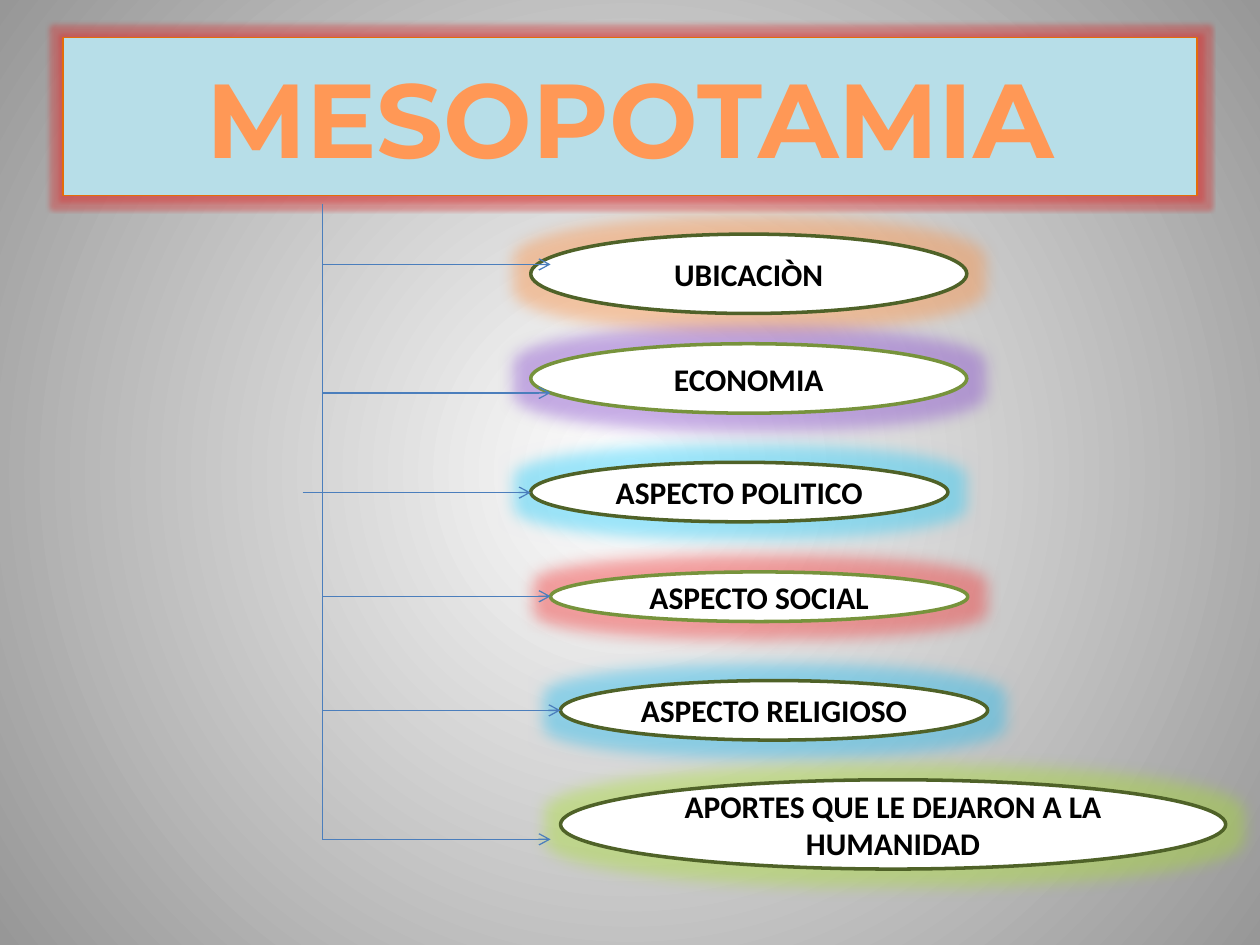
import collections
import copy
import pptx
import pptx.dml.color
import pptx.enum.shapes
import pptx.enum.text
import pptx.oxml
import pptx.oxml.ns
import pptx.util
from pptx.oxml.ns import qn
from pptx.util import Cm, Pt

Topic = collections.namedtuple("Topic", "text oval outline glow arrow")
Box = collections.namedtuple("Box", "left top width height")
Arrow = collections.namedtuple("Arrow", "start end y")

DARK_GREEN, LIGHT_GREEN = "4F6228", "77933C"
ORANGE, PURPLE, CYAN, RED, SKY, LIME = "FF8A36", "7F3FCC", "14C8FA", "F52323", "14B8F0", "A8E02A"
WHITE, BLACK, LINE_BLUE = "FFFFFF", "000000", "4B7EBC"
BANNER_FILL, BANNER_OUTLINE, BANNER_GLOW = "B7DEE8", "E46C0A", "D93030"

THIN, THICK = 0.75, 2
BANNER_GLOW_RADIUS, OVAL_GLOW_RADIUS = 5, 18
TRUNK_X, TRUNK_TOP = 6.5, 4.11

TITLE = "MESOPOTAMIA"
BANNER = Box(1.27, 0.76, 22.86, 3.18)
TITLE_STOPS = [(0, "9D4700"), (0.78, "FF9856"), (1, "FFF5F1")]
BACKGROUND_STOPS = [(0, WHITE), (1, "979797")]

TOPICS = [
    Topic("UBICACIÒN", Box(10.7, 4.72, 8.79, 1.6),
          DARK_GREEN, ORANGE, Arrow(TRUNK_X, 11.1, 5.33)),
    Topic("ECONOMIA", Box(10.7, 6.93, 8.79, 1.4),
          LIGHT_GREEN, PURPLE, Arrow(TRUNK_X, 11.1, 7.92)),
    Topic("ASPECTO POLITICO", Box(10.7, 9.32, 8.41, 1.2),
          DARK_GREEN, CYAN, Arrow(6.1, 10.7, 9.93)),
    Topic("ASPECTO SOCIAL", Box(11.1, 11.53, 8.41, 1),
          LIGHT_GREEN, RED, Arrow(TRUNK_X, 11.1, 12.02)),
    Topic("ASPECTO RELIGIOSO", Box(11.3, 13.72, 8.61, 1.2),
          DARK_GREEN, SKY, Arrow(TRUNK_X, 11.3, 14.32)),
    Topic("APORTES QUE LE DEJARON A LA HUMANIDAD", Box(11.3, 15.72, 13.41, 1.8),
          DARK_GREEN, LIME, Arrow(TRUNK_X, 11.1, 16.92)),
]


def rgb(color):
    return pptx.dml.color.RGBColor.from_string(color)


def add_xml(parent, tag, inner="", **attributes):
    pairs = " ".join(f'{name}="{value}"' for name, value in attributes.items())
    namespace = pptx.oxml.ns.nsdecls("a")
    parent.append(pptx.oxml.parse_xml(f"<a:{tag} {namespace} {pairs}>{inner}</a:{tag}>"))


def set_gradient(fill, owner, stops):
    fill.gradient()
    gradient = next(owner.iter(qn("a:gradFill")))
    stop_list = gradient.find(qn("a:gsLst"))
    while len(stop_list) < len(stops):
        stop_list.append(copy.deepcopy(stop_list[-1]))
    for stop, (position, color) in zip(fill.gradient_stops, stops):
        stop.position = position
        stop.color.rgb = rgb(color)
    return gradient


def paint_background(slide):
    gradient = set_gradient(slide.background.fill, slide.element, BACKGROUND_STOPS)
    gradient.remove(gradient.find(qn("a:lin")))
    center = '<a:fillToRect l="50000" t="50000" r="50000" b="50000"/>'
    add_xml(gradient, "path", center, path="circle")


def add_glow(shape, color, radius):
    shape.shadow.inherit = False
    effects = shape.element.spPr.find(qn("a:effectLst"))
    tint = f'<a:srgbClr val="{color}"><a:alpha val="40000"/></a:srgbClr>'
    add_xml(effects, "glow", tint, rad=Pt(radius))


def add_shape(slide, preset, box, fill, outline, outline_width):
    shape = slide.shapes.add_shape(preset, *map(Cm, box))
    shape.fill.solid()
    shape.fill.fore_color.rgb = rgb(fill)
    shape.line.color.rgb = rgb(outline)
    shape.line.width = Pt(outline_width)
    return shape


def add_label(shape, text, font, size):
    frame = shape.text_frame
    frame.word_wrap = True
    frame.vertical_anchor = pptx.enum.text.MSO_ANCHOR.MIDDLE
    paragraph = frame.paragraphs[0]
    paragraph.alignment = pptx.enum.text.PP_ALIGN.CENTER
    run = paragraph.add_run()
    run.text = text
    run.font.name = font
    run.font.size = Pt(size)
    run.font.bold = True
    return run


def add_line(slide, start_x, start_y, end_x, end_y):
    straight = pptx.enum.shapes.MSO_CONNECTOR.STRAIGHT
    connector = slide.shapes.add_connector(straight, *map(Cm, (start_x, start_y, end_x, end_y)))
    connector.line.color.rgb = rgb(LINE_BLUE)
    connector.line.width = Pt(THIN)
    add_xml(connector.element.spPr, "effectLst")
    return connector


def add_banner(slide):
    rectangle = pptx.enum.shapes.MSO_SHAPE.RECTANGLE
    banner = add_shape(slide, rectangle, BANNER, BANNER_FILL, BANNER_OUTLINE, THIN)
    add_glow(banner, BANNER_GLOW, BANNER_GLOW_RADIUS)
    heading = add_label(banner, TITLE, "Montserrat", 60)
    set_gradient(heading.font.fill, banner.element, TITLE_STOPS)
    heading.font.fill.gradient_angle = 270


def add_topic_oval(slide, topic):
    ellipse = pptx.enum.shapes.MSO_SHAPE.OVAL
    oval = add_shape(slide, ellipse, topic.oval, WHITE, topic.outline, THICK)
    add_glow(oval, topic.glow, OVAL_GLOW_RADIUS)
    label = add_label(oval, topic.text, "Calibri", 18)
    label.font.color.rgb = rgb(BLACK)


def add_topic_arrow(slide, arrow):
    branch = add_line(slide, arrow.start, arrow.y, arrow.end, arrow.y)
    add_xml(branch.element.spPr.find(qn("a:ln")), "tailEnd", type="arrow")


def main():
    deck = pptx.Presentation()
    deck.slide_width, deck.slide_height = Cm(25.4), Cm(19.05)
    slide = deck.slides.add_slide(deck.slide_layouts[6])

    paint_background(slide)
    add_banner(slide)
    trunk_bottom = TOPICS[-1].arrow.y
    add_line(slide, TRUNK_X, TRUNK_TOP, TRUNK_X, trunk_bottom)
    for topic in TOPICS:
        add_topic_oval(slide, topic)
    for topic in TOPICS:
        add_topic_arrow(slide, topic.arrow)

    deck.save("out.pptx")


if __name__ == "__main__":
    main()
